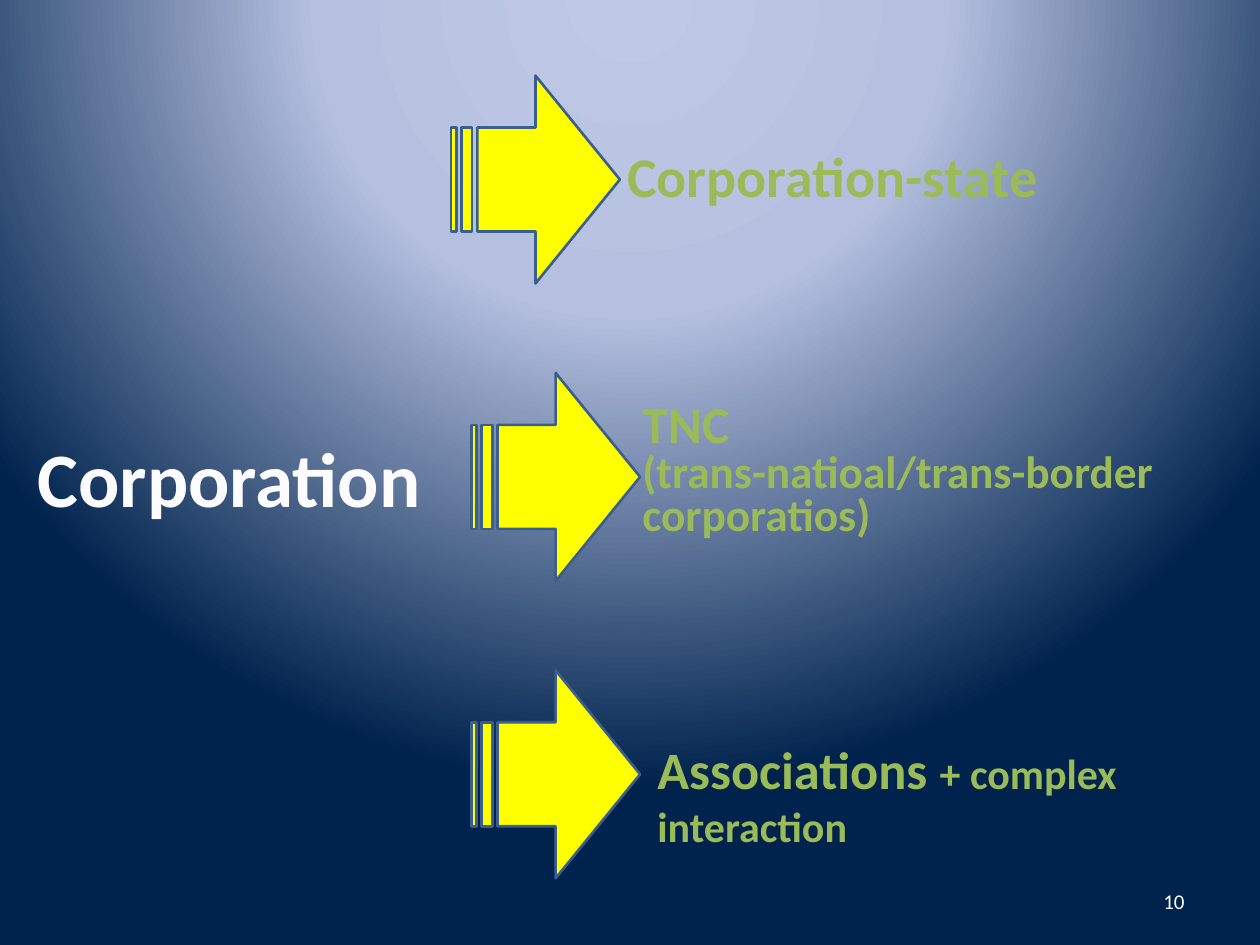
"""Build the slide on three kinds of corporation on a 100 by 75 grid."""
from lxml import etree
from pptx import Presentation, util as u
from pptx.dml.color import RGBColor
from pptx.enum import shapes, text
from pptx.oxml import ns

WHITE = RGBColor(0xFF, 0xFF, 0xFF)
TITLE = RGBColor(0xFC, 0xFC, 0xFF)
GREEN = RGBColor(0x9B, 0xBB, 0x59)
YELLOW = RGBColor(0xFF, 0xFF, 0x00)
BLUE = RGBColor(0x3A, 0x5F, 0x8C)
GLOW = [(0, RGBColor(0xBF, 0xC9, 0xE5)), (40, RGBColor(0xB5, 0xC0, 0xE0)),
        (100, RGBColor(0x00, 0x23, 0x4D))]
WIDTH, HEIGHT = u.Inches(10), u.Inches(7.5)
COLUMNS, ROWS = 100, 75
ARROW_TOP, ARROW_STEP = 6, 23.6

BRANCHES = [
    (35.8, (48.8, 5.3, 52, 17.2), 1, [[("Corporation-state", 32)]]),
    (37.4, (50, 31.2, 50.4, 12.5), 0.8,
     [[("TNC", 29.6)], [("(trans-natioal/trans-border corporatios)", 25.9)]]),
    (37.4, (51.2, 51.2, 50.3, 23.6), 1,
     [[("Associations ", 30), ("+ complex interaction", 24)]]),
]


def grid(col, row, cols, rows):
    """Turn grid columns and rows into left, top, width and height."""
    return (int(WIDTH * col / COLUMNS), int(HEIGHT * row / ROWS),
            int(WIDTH * cols / COLUMNS), int(HEIGHT * rows / ROWS))


def style(r, size, color, bold=True):
    """Format one run."""
    r.font.name, r.font.size, r.font.bold = "Calibri", u.Pt(size), bold
    r.font.color.rgb = color


def paint_background(s):
    """Give the slide a circular gradient glowing from the top."""
    s.background.fill.solid()
    bg = s.background.fill._xPr
    bg.remove(bg.find(ns.qn("a:solidFill")))
    stops = "".join(f'<a:gs pos="{pos * 1000}"><a:srgbClr val="{color}"/></a:gs>'
                    for pos, color in GLOW)
    bg.insert(0, etree.fromstring(
        f'<a:gradFill {ns.nsdecls("a")} rotWithShape="1"><a:gsLst>{stops}</a:gsLst>'
        '<a:path path="circle"><a:fillToRect l="50000" t="-80000" r="50000" '
        'b="180000"/></a:path></a:gradFill>'))


def set_title(s, title, box):
    """Move the title placeholder and format its text."""
    sp = s.shapes.title
    sp.left, sp.top, sp.width, sp.height = grid(*box)
    tf = sp.text_frame
    tf.text = title
    tf.auto_size = text.MSO_AUTO_SIZE.NONE
    tf.vertical_anchor = text.MSO_ANCHOR.TOP
    tf.paragraphs[0].alignment = text.PP_ALIGN.LEFT
    style(tf.paragraphs[0].runs[0], 44, TITLE)


def add_arrow(s, box):
    """Add a yellow striped arrow."""
    sp = s.shapes.add_shape(shapes.MSO_SHAPE.STRIPED_RIGHT_ARROW, *grid(*box))
    sp.shadow.inherit = False
    sp.fill.solid()
    sp.fill.fore_color.rgb = YELLOW
    sp.line.color.rgb, sp.line.width = BLUE, u.Pt(1.5)


def add_label(s, box, lines, color=GREEN, bold=True, spacing=1,
              align=text.PP_ALIGN.LEFT):
    """Add a vertically centred text box of lines made of (text, size) runs."""
    tf = s.shapes.add_textbox(*grid(*box)).text_frame
    tf.word_wrap = True
    tf.vertical_anchor = text.MSO_ANCHOR.MIDDLE
    for i, line in enumerate(lines):
        p = tf.add_paragraph() if i else tf.paragraphs[0]
        p.alignment, p.line_spacing = align, spacing
        for words, size in line:
            r = p.add_run()
            r.text = words
            style(r, size, color, bold)


def main():
    """Build and save the slide."""
    prs = Presentation()
    prs.slide_width, prs.slide_height = WIDTH, HEIGHT
    s = prs.slides.add_slide(prs.slide_layouts.get_by_name("Title Only"))
    paint_background(s)
    set_title(s, "Corporation", (2, 33.7, 34.6, 24.3))
    for i, (col, box, spacing, lines) in enumerate(BRANCHES):
        add_arrow(s, (col, ARROW_TOP + i * ARROW_STEP, 13.4, 16.5))
        add_label(s, box, lines, spacing=spacing)
    add_label(s, (71.7, 69.5, 23.3, 4), [[("10", 12)]], WHITE, False,
              align=text.PP_ALIGN.RIGHT)
    prs.save("out.pptx")


if __name__ == "__main__":
    main()
